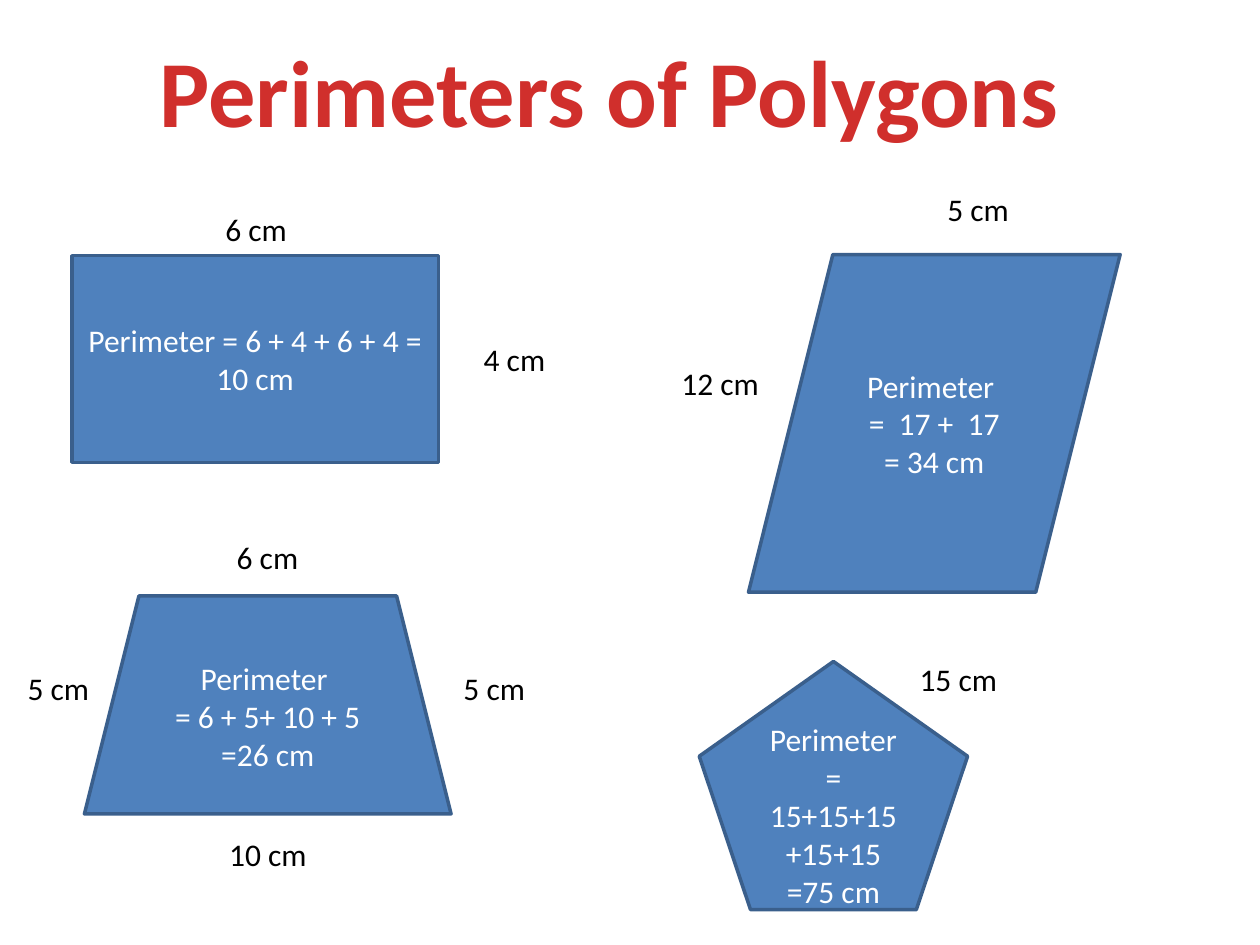
from pptx import Presentation
from pptx.dml.color import RGBColor
from pptx.enum.shapes import MSO_SHAPE as Preset
from pptx.enum.text import MSO_ANCHOR as Anchor, MSO_AUTO_SIZE as AutoSize, PP_ALIGN as Align
from pptx.util import Inches, Pt

RED = RGBColor(0xD0, 0x2F, 0x2C)
BLUE = RGBColor(0x4F, 0x81, 0xBD)
DARK_BLUE = RGBColor(0x3A, 0x5F, 0x8C)
WHITE = RGBColor(0xFF, 0xFF, 0xFF)
BLACK = RGBColor(0, 0, 0)
FONT = "Calibri"
LABEL_HEIGHT = 0.4

POLYGONS = [
    (Preset.RECTANGLE, (0.57, 2.03, 2.91, 1.64), ["Perimeter = 6 + 4 + 6 + 4 = 10 cm"]),
    (Preset.PARALLELOGRAM, (5.94, 2.02, 2.95, 2.68), ["Perimeter ", "=  17 +  17", "= 34 cm"]),
    (Preset.TRAPEZOID, (0.67, 4.73, 2.91, 1.73), ["Perimeter ", "= 6 + 5+ 10 + 5", "=26 cm"]),
    (Preset.REGULAR_PENTAGON, (5.55, 5.25, 2.13, 1.97), ["Perimeter = 15+15+15+15+15", "=75 cm"]),
]

SIDE_LABELS = [
    ("6 cm", 1.69, 1.62, 0.71),
    ("4 cm", 3.74, 2.65, 0.71),
    ("5 cm", 7.42, 1.46, 0.71),
    ("12 cm", 5.31, 2.84, 0.94),
    ("6 cm", 1.78, 4.22, 0.71),
    ("10 cm", 1.72, 6.58, 1.07),
    ("5 cm", 3.58, 5.26, 0.71),
    ("5 cm", 0.12, 5.26, 0.71),
    ("15 cm", 7.2, 5.19, 0.93),
]


def write_lines(frame, lines, color, size=18, bold=False, align=Align.CENTER):
    """Write each line as one paragraph of the text frame."""
    for index, line in enumerate(lines):
        paragraph = frame.add_paragraph() if index else frame.paragraphs[0]
        paragraph.alignment = align
        run = paragraph.add_run()
        run.text = line
        run.font.name = FONT
        run.font.size = Pt(size)
        run.font.bold = bold
        run.font.color.rgb = color


def add_text_box(slide, box, wrap):
    """Add a text box that grows with its text and return its frame."""
    frame = slide.shapes.add_textbox(*map(Inches, box)).text_frame
    frame.word_wrap = wrap
    frame.auto_size = AutoSize.SHAPE_TO_FIT_TEXT
    return frame


def add_title(slide, box):
    """Place the slide title in the box."""
    frame = add_text_box(slide, box, wrap=False)
    write_lines(frame, ["Perimeters of Polygons"], RED, size=54, bold=True)


def add_polygon(slide, preset, box, lines):
    """Place a polygon in the box with its perimeter worked out inside."""
    shape = slide.shapes.add_shape(preset, *map(Inches, box))
    shape.shadow.inherit = False
    shape.fill.solid()
    shape.fill.fore_color.rgb = BLUE
    shape.line.color.rgb = DARK_BLUE
    shape.line.width = Pt(2)
    shape.text_frame.word_wrap = True
    shape.text_frame.vertical_anchor = Anchor.MIDDLE
    write_lines(shape.text_frame, lines, WHITE)


def add_side_label(slide, text, left, top, width):
    """Place the length of one side."""
    frame = add_text_box(slide, (left, top, width, LABEL_HEIGHT), wrap=True)
    write_lines(frame, [text], BLACK, align=Align.LEFT)


def main():
    """Build and save the slide."""
    presentation = Presentation()
    presentation.slide_width = Inches(10)
    presentation.slide_height = Inches(7.5)
    slide = presentation.slides.add_slide(presentation.slide_layouts[6])
    add_title(slide, (1.13, 0.21, 7.41, 1.01))
    for polygon in POLYGONS:
        add_polygon(slide, *polygon)
    for label in SIDE_LABELS:
        add_side_label(slide, *label)
    presentation.save("out.pptx")


if __name__ == "__main__":
    main()
